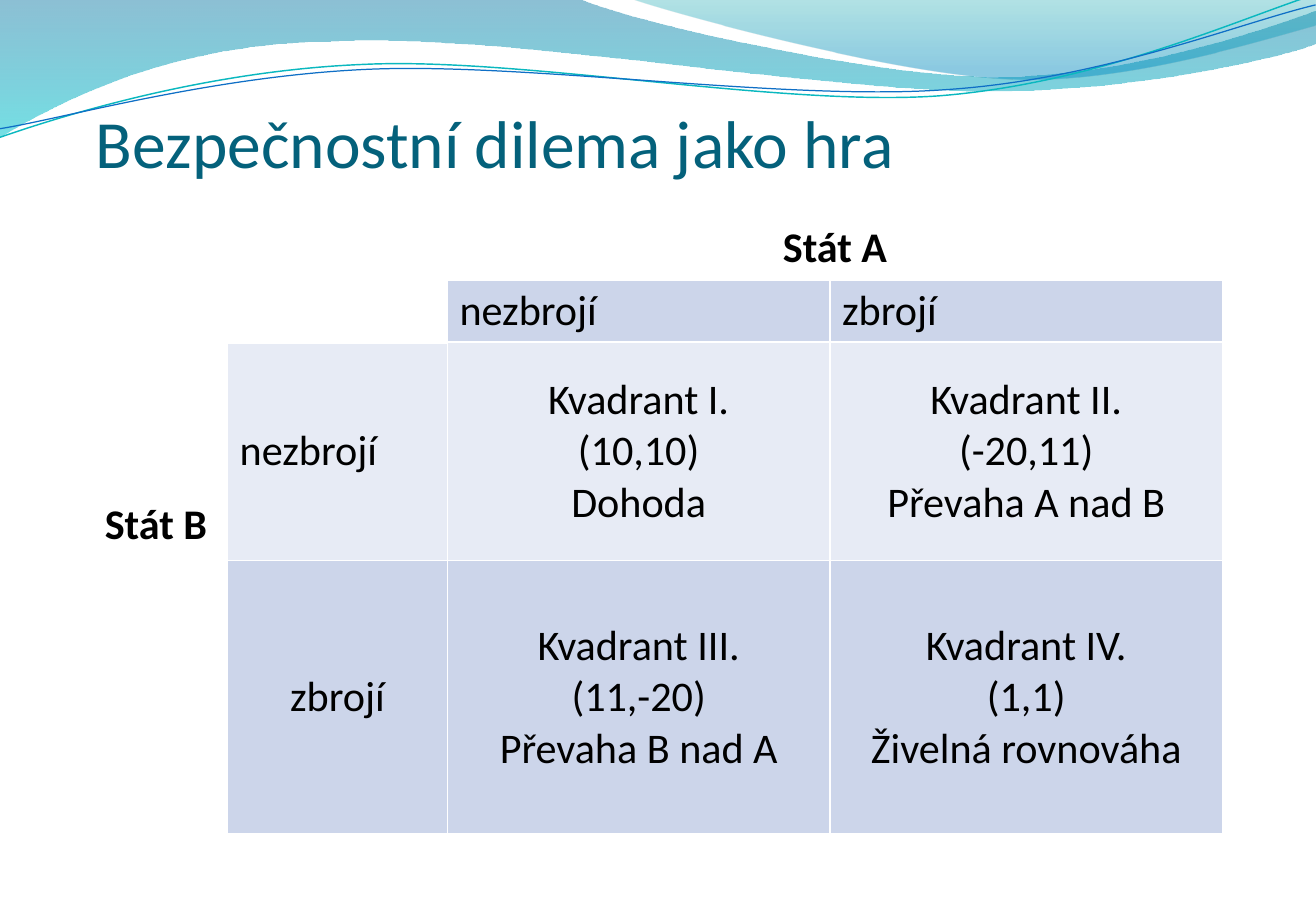
from dataclasses import dataclass, field

import lxml.etree
import pptx
import pptx.dml.color
import pptx.enum.text
import pptx.oxml.ns
import pptx.util

Pt = pptx.util.Pt
qn = pptx.oxml.ns.qn
Align = pptx.enum.text.PP_ALIGN
Anchor = pptx.enum.text.MSO_ANCHOR
Point = tuple[float, float]


@dataclass(frozen=True)
class Theme:
    font: str = "Calibri"
    title_size: float = 40
    table_size: float = 25
    title: str = "04617B"
    text: str = "000000"
    border: str = "FFFFFF"
    dark_cell: str = "CCD5EA"
    light_cell: str = "E7EBF5"
    teal_line: str = "0AB8BF"
    blue_line: str = "0F6FC6"


@dataclass(frozen=True)
class Stop:
    position: float
    color: str
    opacity: int


@dataclass(frozen=True)
class Wave:
    start: Point
    segments: list[list[Point]]
    stops: list[Stop] = field(default_factory=list)
    line_color: str = ""
    line_width: float = 0


@dataclass(frozen=True)
class Cell:
    row: int
    column: int
    lines: list[str]
    fill: str = ""
    centered: bool = True
    bold: bool = False
    rows: int = 1
    columns: int = 1


THEME = Theme()
COLUMN_WIDTHS = [85, 130.3, 226.8, 232.6]
ROW_HEIGHTS = [33.1, 33.1, 129.6, 162]
TABLE_HEIGHT = 365.8

WAVES = [
    Wave((0, -0.7), [
        [(343.4, -0.7)],
        [(370.8, 12.2), (517.7, 45.4), (591.8, 45.4)],
        [(665.3, 45.4), (747.4, 18.7), (779.8, 6.5)],
        [(780.5, 25.9)],
        [(766.8, 31.7), (678.2, 54.7), (581.8, 54)],
        [(485.3, 54), (298.1, 20.2), (200.9, 24.5)],
        [(100.8, 25.2), (36, 59.8), (-0.7, 81.4)],
    ], stops=[Stop(0, "0074A1", 45), Stop(1, "00C6CF", 55)]),
    Wave((373.7, -0.7), [
        [(397.4, 7.9), (532.1, 44.6), (599.8, 46.8)],
        [(667.4, 49.7), (750.2, 23), (779.8, 15.1)],
        [(779.8, 0)],
    ], stops=[Stop(0, "00A1A9", 30), Stop(0.8, "008BBF", 45)]),
    Wave((0, 81.4), [
        [(37.4, 68.4), (123.1, 41.8), (216, 38.2)],
        [(308.2, 33.8), (462.2, 63.4), (555.8, 56.9)],
        [(649.4, 49.7), (732.2, 12.2), (778.3, -2.9)],
    ], line_color=THEME.teal_line, line_width=0.85),
    Wave((0, 76.3), [
        [(36.7, 70.6), (127.4, 44.6), (221, 41)],
        [(313.9, 37.4), (465.8, 59.8), (558.7, 53.3)],
        [(652.3, 47.5), (734.4, 13.7), (779.8, 2.9)],
    ], line_color=THEME.blue_line, line_width=0.75),
]

CELLS = [
    Cell(0, 0, ["Stát B"], bold=True, rows=4),
    Cell(0, 1, [], rows=2),
    Cell(0, 2, ["Stát A"], bold=True, columns=2),
    Cell(1, 2, ["nezbrojí"], THEME.dark_cell, centered=False),
    Cell(1, 3, ["zbrojí"], THEME.dark_cell, centered=False),
    Cell(2, 1, ["nezbrojí"], THEME.light_cell, centered=False),
    Cell(2, 2, ["Kvadrant I.", "(10,10)", "Dohoda"], THEME.light_cell),
    Cell(2, 3, ["Kvadrant II.", "(-20,11)", "Převaha A nad B"], THEME.light_cell),
    Cell(3, 1, ["zbrojí"], THEME.dark_cell),
    Cell(3, 2, ["Kvadrant III.", "(11,-20)", "Převaha B nad A"], THEME.dark_cell),
    Cell(3, 3, ["Kvadrant IV.", "(1,1)", "Živelná rovnováha"], THEME.dark_cell),
]


def rgb(color: str) -> pptx.dml.color.RGBColor:
    return pptx.dml.color.RGBColor.from_string(color)


def bend_segments(shape, wave: Wave) -> None:
    steps = iter(list(shape.element.spPr.iter(qn("a:lnTo"))))
    for segment in wave.segments:
        group = [next(steps) for _ in segment]
        if len(group) == 1:
            continue
        curve = lxml.etree.Element(qn("a:cubicBezTo"))
        group[0].addprevious(curve)
        for step in group:
            curve.append(step[0])
            step.getparent().remove(step)


def add_wave(page, wave: Wave) -> None:
    points = [(Pt(x), Pt(y)) for segment in wave.segments for x, y in segment]
    builder = page.shapes.build_freeform(Pt(wave.start[0]), Pt(wave.start[1]))
    builder.add_line_segments(points, close=bool(wave.stops))
    shape = builder.convert_to_shape()
    bend_segments(shape, wave)
    shape.shadow.inherit = False
    if not wave.stops:
        shape.fill.background()
        shape.line.color.rgb = rgb(wave.line_color)
        shape.line.width = Pt(wave.line_width)
        return
    shape.line.fill.background()
    shape.fill.gradient()
    shape.fill.gradient_angle = 270
    for target, stop in zip(shape.fill.gradient_stops, wave.stops):
        target.position = stop.position
        target.color.rgb = rgb(stop.color)
    for color, stop in zip(shape.element.spPr.iter(qn("a:srgbClr")), wave.stops):
        lxml.etree.SubElement(color, qn("a:alpha"), val=str(stop.opacity * 1000))


def add_span(para, text: str, size: float, color: str, bold: bool = False) -> None:
    span = para.add_run()
    span.text = text
    span.font.name = THEME.font
    span.font.size = Pt(size)
    span.font.bold = bold
    span.font.color.rgb = rgb(color)


def add_title(page, text: str) -> None:
    box = page.shapes.add_textbox(Pt(56.9), Pt(62.6), Pt(668.9), Pt(45.4))
    frame = box.text_frame
    frame.word_wrap = True
    frame.vertical_anchor = Anchor.BOTTOM
    frame.margin_left = frame.margin_right = frame.margin_bottom = 0
    frame.margin_top = Pt(3.6)
    add_span(frame.paragraphs[0], text, THEME.title_size, THEME.title)


def add_borders(cell, bottom_width: float) -> None:
    properties = cell._tc.get_or_add_tcPr()
    for side, width in (("L", 1), ("R", 1), ("T", 1), ("B", bottom_width)):
        border = lxml.etree.SubElement(properties, qn(f"a:ln{side}"), w=str(Pt(width)))
        fill = lxml.etree.SubElement(border, qn("a:solidFill"))
        lxml.etree.SubElement(fill, qn("a:srgbClr"), val=THEME.border)


def fill_cell(table, item: Cell) -> None:
    cell = table.cell(item.row, item.column)
    if item.rows * item.columns > 1:
        cell.merge(table.cell(item.row + item.rows - 1, item.column + item.columns - 1))
    add_borders(cell, 1 if item.fill else 3)
    if item.fill:
        cell.fill.solid()
        cell.fill.fore_color.rgb = rgb(item.fill)
    else:
        cell.fill.background()
    cell.vertical_anchor = Anchor.MIDDLE
    for index, text in enumerate(item.lines):
        frame = cell.text_frame
        para = frame.add_paragraph() if index else frame.paragraphs[0]
        para.alignment = Align.CENTER if item.centered else Align.LEFT
        add_span(para, text, THEME.table_size, THEME.text, item.bold)


def add_game_table(page) -> None:
    holder = page.shapes.add_table(
        len(ROW_HEIGHTS), len(COLUMN_WIDTHS), Pt(49.9), Pt(128.3),
        Pt(sum(COLUMN_WIDTHS)), Pt(TABLE_HEIGHT),
    )
    table = holder.table
    table.first_row = table.horz_banding = False
    for column, width in zip(table.columns, COLUMN_WIDTHS):
        column.width = Pt(width)
    for row, height in zip(table.rows, ROW_HEIGHTS):
        row.height = Pt(height)
    holder.height = Pt(TABLE_HEIGHT)
    for item in CELLS:
        fill_cell(table, item)


def main() -> None:
    deck = pptx.Presentation()
    deck.slide_width, deck.slide_height = Pt(780), Pt(540)
    page = deck.slides.add_slide(deck.slide_layouts[6])
    for wave in WAVES:
        add_wave(page, wave)
    add_title(page, "Bezpečnostní dilema jako hra")
    add_game_table(page)
    deck.save("out.pptx")


if __name__ == "__main__":
    main()
